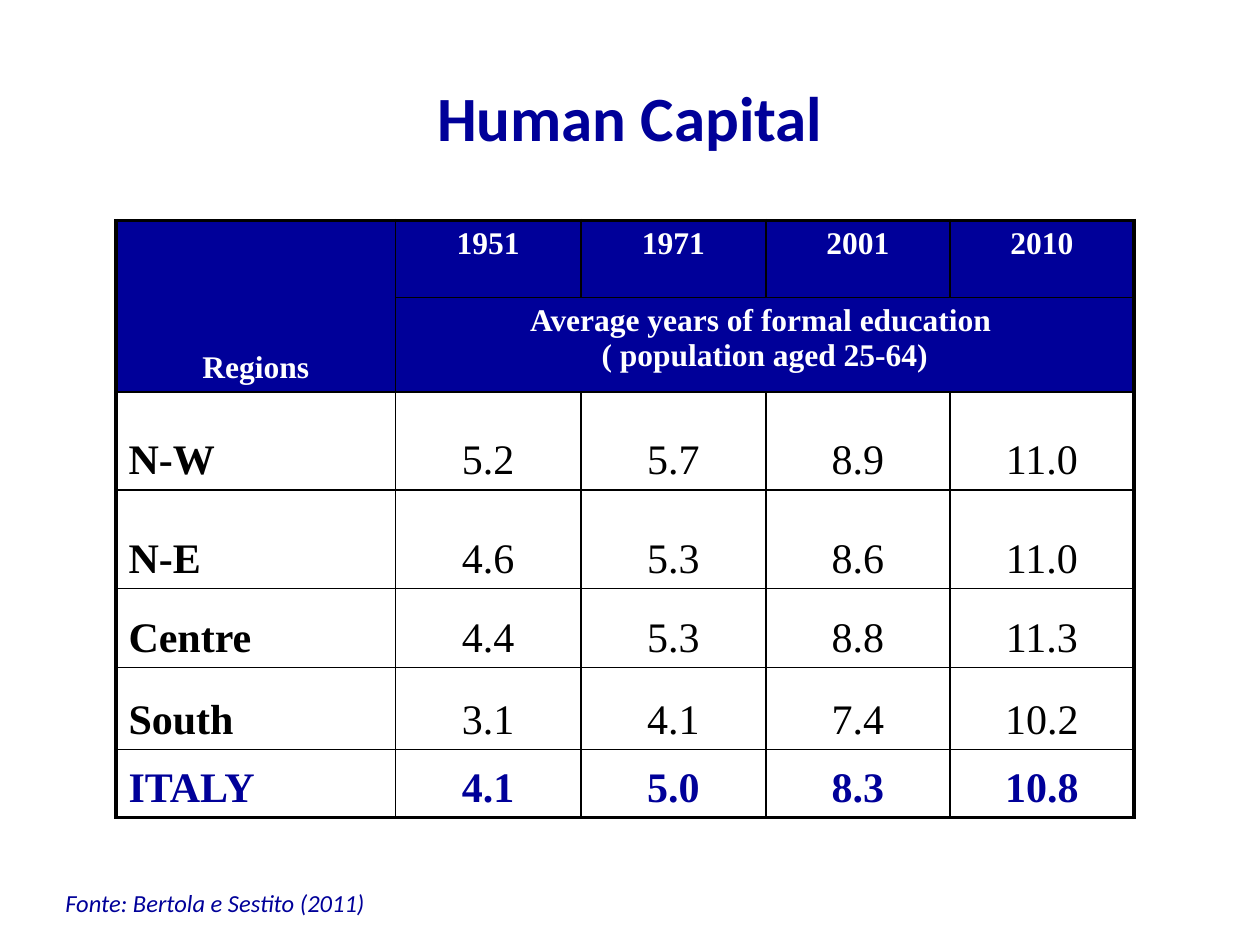
import pptx
import pptx.dml.color
import pptx.enum.text
import pptx.util
from lxml import etree

NAVY, WHITE, BLACK = "000099", "FFFFFF", "000000"
SERIF, SANS = "Times New Roman", "Calibri"
ALIGN = pptx.enum.text.PP_ALIGN
ANCHOR = pptx.enum.text.MSO_ANCHOR
DRAWING_NS = "{http://schemas.openxmlformats.org/drawingml/2006/main}"

COLUMN_WIDTHS = [2.22, 1.47, 1.47, 1.46, 1.46]
ROW_HEIGHTS = [0.61, 0.75, 0.78, 0.78, 0.63, 0.65, 0.54]
YEARS = ["1951", "1971", "2001", "2010"]
MEASURE = "Average years of formal education \n( population aged 25-64)"
SCHOOLING = [
    ("N-W", "5.2", "5.7", "8.9", "11.0"),
    ("N-E", "4.6", "5.3", "8.6", "11.0"),
    ("Centre", "4.4", "5.3", "8.8", "11.3"),
    ("South", "3.1", "4.1", "7.4", "10.2"),
    ("ITALY", "4.1", "5.0", "8.3", "10.8"),
]


def rgb(hex_color):
    return pptx.dml.color.RGBColor.from_string(hex_color)


def place(shape, left, top, width, height):
    shape.left, shape.top, shape.width, shape.height = (
        pptx.util.Inches(length) for length in (left, top, width, height))


def write(frame, text, size, font, color, bold=False, italic=False, align=ALIGN.LEFT):
    frame.text = text
    for paragraph in frame.paragraphs:
        paragraph.alignment = align
        for run in paragraph.runs:
            run.font.size = pptx.util.Pt(size)
            run.font.name = font
            run.font.bold = bold
            run.font.italic = italic
            run.font.color.rgb = rgb(color)


def draw_borders(cell, row, column):
    """Rule all four sides: thick on the table's outer edge, thin inside."""
    last_row = row + cell.span_height - 1 if cell.is_merge_origin else row
    last_column = column + cell.span_width - 1 if cell.is_merge_origin else column
    on_edge = {
        "lnL": column == 0,
        "lnR": last_column == len(COLUMN_WIDTHS) - 1,
        "lnT": row == 0,
        "lnB": last_row == len(ROW_HEIGHTS) - 1,
    }
    properties = cell._tc.get_or_add_tcPr()
    for side, outer in on_edge.items():
        width = pptx.util.Pt(2.25 if outer else 1)
        line = etree.SubElement(properties, DRAWING_NS + side, w=str(int(width)))
        fill = etree.SubElement(line, DRAWING_NS + "solidFill")
        etree.SubElement(fill, DRAWING_NS + "srgbClr", val=BLACK)


def fill_header(table):
    table.cell(0, 0).merge(table.cell(1, 0))
    table.cell(1, 1).merge(table.cell(1, len(YEARS)))
    headings = {(0, column): year for column, year in enumerate(YEARS, 1)}
    headings.update({(0, 0): "Regions", (1, 1): MEASURE})
    for position, text in headings.items():
        write(table.cell(*position).text_frame, text, 18, SERIF, WHITE,
              bold=True, align=ALIGN.CENTER)
    table.cell(0, 0).vertical_anchor = ANCHOR.BOTTOM


def fill_regions(table):
    for row, values in enumerate(SCHOOLING, 2):
        total = values[0] == "ITALY"
        for column, value in enumerate(values):
            cell = table.cell(row, column)
            cell.vertical_anchor = ANCHOR.BOTTOM
            write(cell.text_frame, value, 24, SERIF, NAVY if total else BLACK,
                  bold=total or column == 0,
                  align=ALIGN.CENTER if column else ALIGN.LEFT)


def add_schooling_table(slide):
    left, top, width, height = (pptx.util.Inches(length) for length in (
        0.92, 1.75, sum(COLUMN_WIDTHS), sum(ROW_HEIGHTS)))
    table = slide.shapes.add_table(
        len(ROW_HEIGHTS), len(COLUMN_WIDTHS), left, top, width, height).table
    table.first_row = table.horz_banding = False
    for column, column_width in zip(table.columns, COLUMN_WIDTHS):
        column.width = pptx.util.Inches(column_width)
    for row, row_height in zip(table.rows, ROW_HEIGHTS):
        row.height = pptx.util.Inches(row_height)
    fill_header(table)
    fill_regions(table)
    for row in range(len(ROW_HEIGHTS)):
        for column in range(len(COLUMN_WIDTHS)):
            cell = table.cell(row, column)
            draw_borders(cell, row, column)
            if row < 2:
                cell.fill.solid()
                cell.fill.fore_color.rgb = rgb(NAVY)
            else:
                cell.fill.background()


def add_title(slide):
    title = slide.shapes.title
    place(title, 0.5, 0.3, 9, 1.25)
    title.text_frame.vertical_anchor = ANCHOR.MIDDLE
    write(title.text_frame, "Human Capital", 36, SANS, NAVY, bold=True,
          align=ALIGN.CENTER)


def add_source(slide):
    source = slide.shapes.add_textbox(0, 0, 0, 0)
    place(source, 0.42, 7, 3.58, 0.33)
    source.text_frame.word_wrap = True
    source.text_frame.auto_size = pptx.enum.text.MSO_AUTO_SIZE.SHAPE_TO_FIT_TEXT
    write(source.text_frame, "Fonte: Bertola e Sestito (2011)", 14, SANS, NAVY,
          italic=True)


def main():
    deck = pptx.Presentation()
    deck.slide_width = pptx.util.Inches(10)
    deck.slide_height = pptx.util.Inches(7.5)
    slide = deck.slides.add_slide(deck.slide_layouts.get_by_name("Title Only"))
    add_schooling_table(slide)
    add_title(slide)
    add_source(slide)
    deck.save("out.pptx")


if __name__ == "__main__":
    main()
